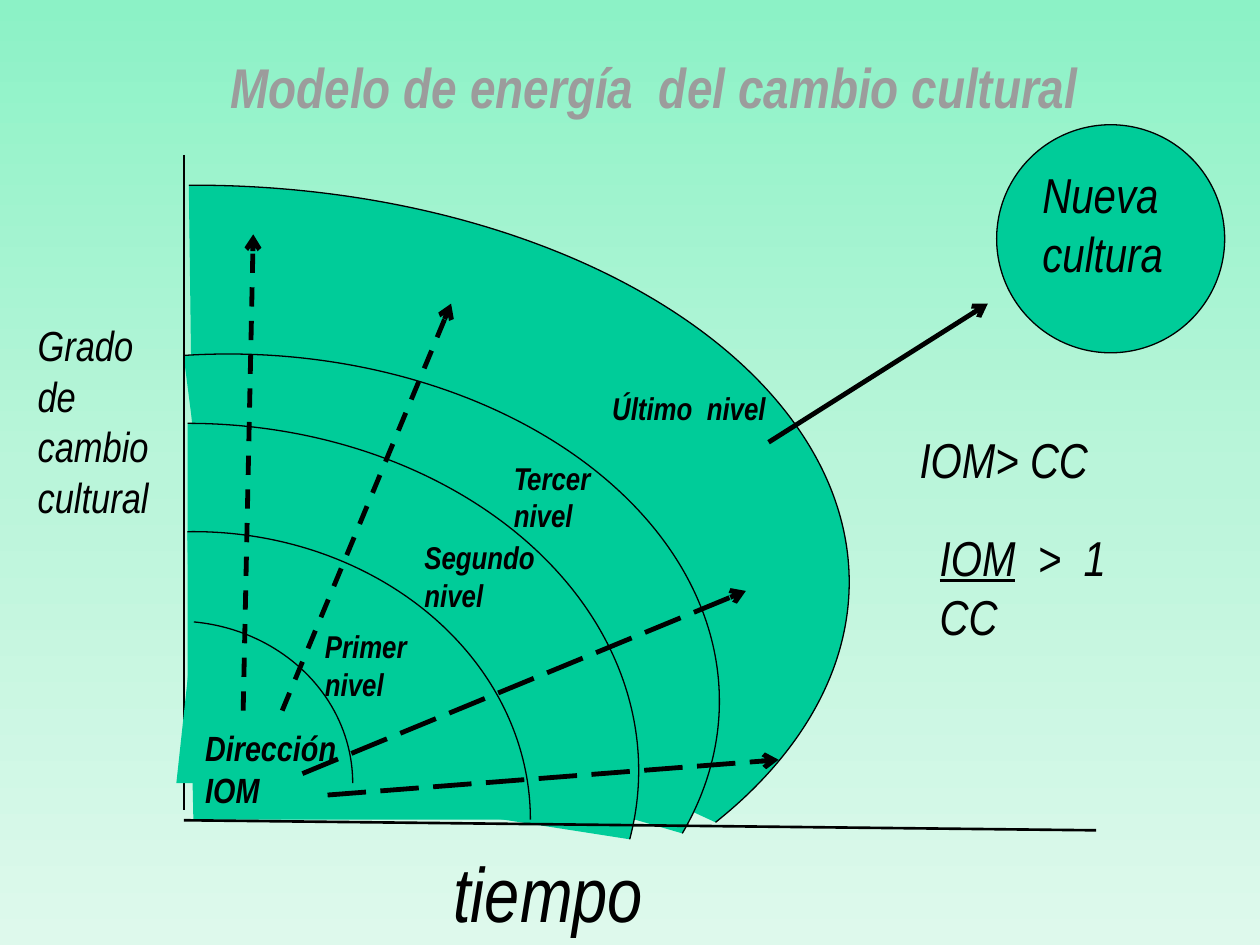
"""Build the slide on the energy model of cultural change."""
from copy import deepcopy
from dataclasses import dataclass

from lxml import etree
from pptx import Presentation
from pptx import util as u
from pptx.dml.color import RGBColor
from pptx.enum import dml, shapes, text
from pptx.oxml.ns import qn

COLUMNS, ROWS = 100, 75
CELL = u.Inches(0.1)
FONT = "Arial Narrow"
BLACK = RGBColor(0x00, 0x00, 0x00)
GREY = RGBColor(0x9C, 0x9C, 0x9C)
GREEN = RGBColor(0x00, 0xCC, 0x99)
SKY = (
    (0, RGBColor(0x8C, 0xF2, 0xC6)),
    (0.5, RGBColor(0xBA, 0xF5, 0xDA)),
    (1, RGBColor(0xDE, 0xF9, 0xEC)),
)


@dataclass(frozen=True)
class Box:
    column: float
    row: float
    columns: float
    rows: float

    def lengths(self) -> list[int]:
        return [cells(n) for n in (self.column, self.row, self.columns, self.rows)]


@dataclass(frozen=True)
class Wave:
    box: Box
    start: float
    end: float


@dataclass(frozen=True)
class Label:
    words: str
    box: Box
    size: int
    bold: bool = False


@dataclass(frozen=True)
class Line:
    start: tuple[float, float]
    end: tuple[float, float]
    width: float = 2.75
    dash: dml.MSO_LINE | None = None
    arrow: bool = True


OUTER_WAVES = (
    Wave(Box(-36.6, 14.7, 104, 63), 161.55, 14.84),
    Wave(Box(-20.9, 28.1, 78, 55.1), 157.61, 9.74),
    Wave(Box(-20.9, 33.6, 71.6, 55.1), 162, 5.31),
    Wave(Box(-11.4, 42.2, 53.5, 45.7), 161.28, 0),
)
CORE_WAVE = Wave(Box(0, 49.3, 28, 25.7), 165.72, 0)
AXES = (
    Line((14.6, 12.3), (14.6, 64.3), 1.5, arrow=False),
    Line((14.6, 65.1), (87, 65.9), 1.5, arrow=False),
)
ARROWS = (
    Line((19.3, 56.4), (20.1, 18.6), dash=dml.MSO_LINE.DASH),
    Line((22.4, 56.4), (35.8, 24.1), dash=dml.MSO_LINE.DASH),
    Line((24, 61.4), (59.2, 46.9), dash=dml.MSO_LINE.LONG_DASH),
    Line((26, 63.1), (61.8, 60.3), dash=dml.MSO_LINE.LONG_DASH),
    Line((61, 35.1), (78.4, 24.1)),
)
LABELS = (
    Label("tiempo", Box(35, 66.6, 18.9, 8.4), 44),
    Label("Grado de cambio cultural", Box(2, 24.9, 11, 17.2), 24),
    Label("Dirección\nIOM", Box(15.3, 57.2, 16.5, 7.7), 20, True),
    Label("Primer nivel", Box(24.8, 49.3, 10.2, 7.1), 18, True),
    Label("Segundo nivel", Box(32.7, 42.2, 14.2, 7.1), 18, True),
    Label("Tercer nivel", Box(39.8, 35.9, 12.6, 7.1), 18, True),
    Label("Último  nivel", Box(47.6, 30.4, 14.2, 7.1), 18, True),
    Label("IOM> CC", Box(72, 33.6, 18.9, 5.7), 28),
)
RATIO = Label("IOM\nCC", Box(73.6, 41.4, 23.6, 10.4), 28)
GOAL = Label("Nueva cultura", Box(79.1, 9.9, 18.1, 18.1), 28)


def cells(count: float) -> int:
    return round(count * CELL)


def paint_background(slide) -> None:
    fill = slide.background.fill
    fill.gradient()
    fill.gradient_angle = 270
    stop_list = next(slide.element.iter(qn("a:gsLst")))
    stop_list.insert(1, deepcopy(stop_list[0]))
    for stop, (position, color) in zip(fill.gradient_stops, SKY):
        stop.position = position
        stop.color.rgb = color


def write(shape, words: str, size: int, bold: bool, color: RGBColor = BLACK,
          align=text.PP_ALIGN.LEFT) -> None:
    shape.text_frame.text = words
    for paragraph in shape.text_frame.paragraphs:
        paragraph.alignment = align
        font = paragraph.font
        font.name, font.size = FONT, u.Pt(size)
        font.bold, font.italic = bold, True
        font.color.rgb = color


def draw_title(slide) -> None:
    title = slide.shapes.title
    title.left, title.top, title.width, title.height = Box(17, 3.6, 69.9, 6.4).lengths()
    write(title, "Modelo de energía  del cambio cultural", 32, True, GREY,
          text.PP_ALIGN.CENTER)
    title.text_frame.word_wrap = False
    title.text_frame.auto_size = text.MSO_AUTO_SIZE.SHAPE_TO_FIT_TEXT


def draw_green(slide, kind: shapes.MSO_SHAPE, box: Box):
    shape = slide.shapes.add_shape(kind, *box.lengths())
    shape.shadow.inherit = False
    shape.fill.solid()
    shape.fill.fore_color.rgb = GREEN
    shape.line.color.rgb = BLACK
    shape.line.width = u.Pt(0.75)
    return shape


def draw_wave(slide, wave: Wave) -> None:
    shape = draw_green(slide, shapes.MSO_SHAPE.ARC, wave.box)
    shape.adjustments[0] = wave.start
    shape.adjustments[1] = wave.end


def draw_goal(slide, label: Label) -> None:
    circle = draw_green(slide, shapes.MSO_SHAPE.OVAL, label.box)
    circle.text_frame.vertical_anchor = text.MSO_ANCHOR.TOP
    write(circle, label.words, label.size, label.bold)


def draw_label(slide, label: Label):
    box = slide.shapes.add_textbox(*label.box.lengths())
    box.text_frame.word_wrap = True
    box.text_frame.auto_size = text.MSO_AUTO_SIZE.SHAPE_TO_FIT_TEXT
    write(box, label.words, label.size, label.bold)
    return box


def draw_ratio(slide) -> None:
    paragraph = draw_label(slide, RATIO).text_frame.paragraphs[0]
    paragraph.runs[0].font.underline = True
    paragraph.add_run().text = "  >  1"


def draw_line(slide, line: Line) -> None:
    ends = [cells(n) for n in (*line.start, *line.end)]
    connector = slide.shapes.add_connector(shapes.MSO_CONNECTOR.STRAIGHT, *ends)
    connector.line.color.rgb = BLACK
    connector.line.width = u.Pt(line.width)
    if line.dash:
        connector.line.dash_style = line.dash
    properties = connector.element.spPr
    if line.arrow:
        etree.SubElement(properties.find(qn("a:ln")), qn("a:tailEnd"), type="arrow")
    etree.SubElement(properties, qn("a:effectLst"))


def main() -> None:
    presentation = Presentation()
    presentation.slide_width = cells(COLUMNS)
    presentation.slide_height = cells(ROWS)
    slide = presentation.slides.add_slide(presentation.slide_layouts[5])
    paint_background(slide)
    draw_title(slide)
    for wave in OUTER_WAVES:
        draw_wave(slide, wave)
    for axis in AXES:
        draw_line(slide, axis)
    draw_goal(slide, GOAL)
    draw_wave(slide, CORE_WAVE)
    for label in LABELS:
        draw_label(slide, label)
    for arrow in ARROWS:
        draw_line(slide, arrow)
    draw_ratio(slide)
    presentation.save("out.pptx")


if __name__ == "__main__":
    main()
